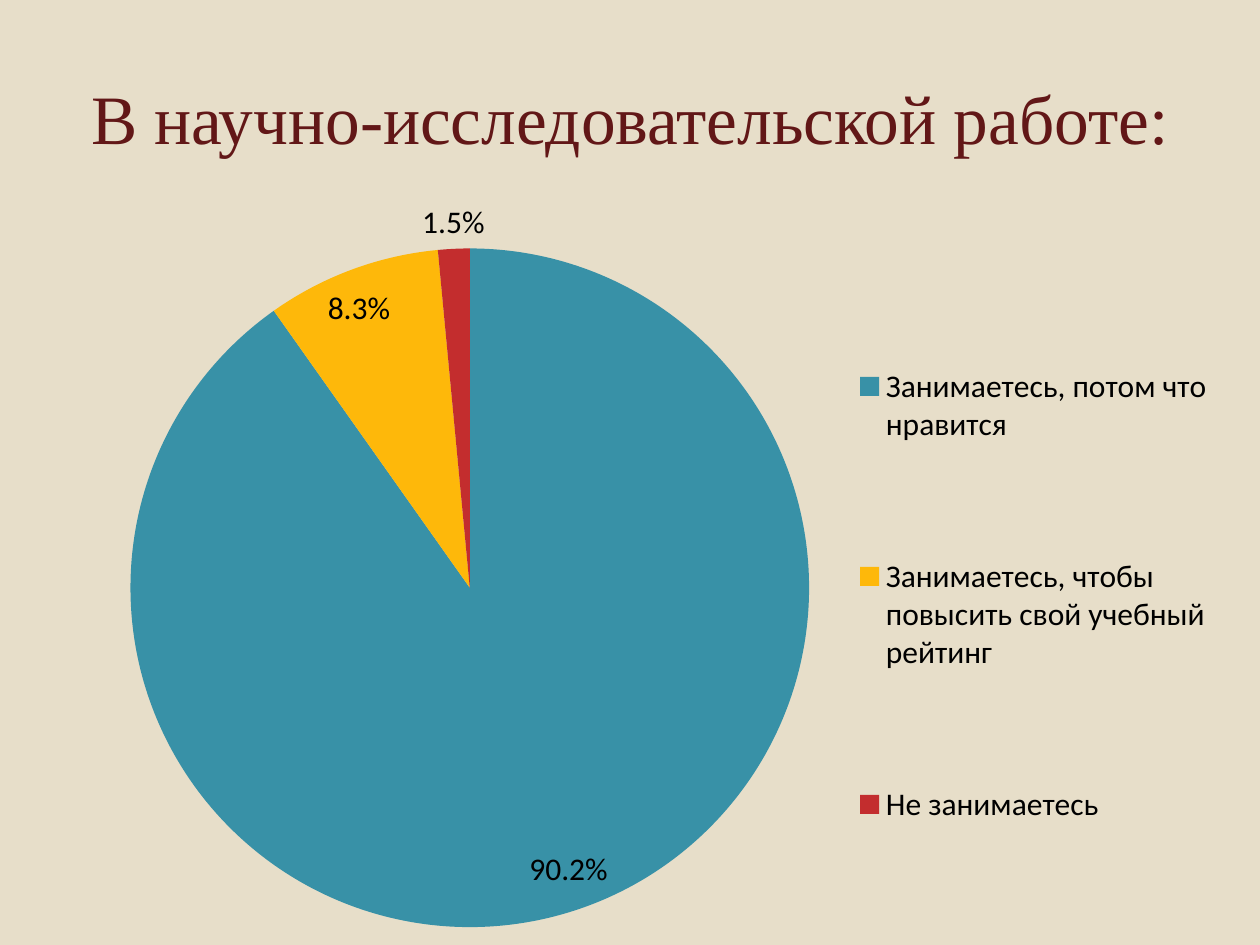
from pptx import Presentation
from pptx import util as u
from pptx.chart.data import CategoryChartData
from pptx.dml.color import RGBColor
from pptx.enum import chart as ch, text
from pptx.oxml import parse_xml
from pptx.oxml.ns import nsdecls


def rgb(value):
    return RGBColor.from_string(value)


def manual_layout(x, y, w, h, inner=False):
    target = '<c:layoutTarget val="inner"/>' if inner else ""
    sizes = "".join(f'<c:{k} val="{v}"/>' for k, v in zip("xywh", (x, y, w, h)))
    return parse_xml(
        f'<c:layout {nsdecls("c")}><c:manualLayout>{target}'
        f'<c:xMode val="edge"/><c:yMode val="edge"/>{sizes}'
        "</c:manualLayout></c:layout>"
    )


class SlideBuilder:
    heading_font = "Times New Roman"
    body_font = "Calibri"
    heading_color = "621717"
    body_color = "000000"
    background = "E7DEC9"

    def __init__(self, prs):
        self.s = prs.slides.add_slide(prs.slide_layouts[6])
        fill = self.s.background.fill
        fill.solid()
        fill.fore_color.rgb = rgb(self.background)

    def style(self, font, name, size, color):
        font.name = name
        font.size = u.Pt(size)
        font.color.rgb = rgb(color)

    def title(self, wording, box, size):
        tf = self.s.shapes.add_textbox(*map(u.Inches, box)).text_frame
        tf.word_wrap = True
        tf.vertical_anchor = text.MSO_ANCHOR.MIDDLE
        p = tf.paragraphs[0]
        p.alignment = text.PP_ALIGN.CENTER
        r = p.add_run()
        r.text = wording
        self.style(r.font, self.heading_font, size, self.heading_color)

    def pie(self, slices, box, size, plot_area, legend_area):
        data = CategoryChartData()
        data.categories = [name for name, _, _ in slices]
        data.add_series("Series 1", [value for _, value, _ in slices])
        chart = self.s.shapes.add_chart(
            ch.XL_CHART_TYPE.PIE, *map(u.Inches, box), data
        ).chart
        chart.has_title = False
        self.style(chart.font, self.body_font, size, self.body_color)

        plot = chart.plots[0]
        plot.vary_by_categories = True
        for i, (_, _, color) in enumerate(slices):
            fill = plot.series[0].points[i].format.fill
            fill.solid()
            fill.fore_color.rgb = rgb(color)

        plot.has_data_labels = True
        labels = plot.data_labels
        labels.show_percentage = True
        labels.show_value = False
        labels.number_format = "0.0%"
        labels.number_format_is_linked = False
        labels.position = ch.XL_LABEL_POSITION.BEST_FIT
        self.style(labels.font, self.body_font, size, self.body_color)

        chart.has_legend = True
        legend = chart.legend
        legend.position = ch.XL_LEGEND_POSITION.RIGHT
        legend.include_in_layout = False
        self.style(legend.font, self.body_font, size, self.body_color)

        for parent, layout in (
            (chart._chartSpace.chart.plotArea, manual_layout(*plot_area, inner=True)),
            (legend._element, manual_layout(*legend_area)),
        ):
            for old in parent.xpath("c:layout"):
                parent.remove(old)
            before = parent.xpath("c:legendPos")
            parent.insert(len(before), layout)


def main():
    prs = Presentation()
    prs.slide_width, prs.slide_height = u.Inches(10), u.Inches(7.5)
    slide = SlideBuilder(prs)
    slide.title("В научно-исследовательской работе:", (0.5, 0.3, 9, 1.25), 39.6)
    slide.pie(
        [
            ("Занимаетесь, потом что нравится", 90.2, "3891A7"),
            ("Занимаетесь, чтобы повысить свой учебный рейтинг", 8.3, "FEB80A"),
            ("Не занимаетесь", 1.5, "C32D2E"),
        ],
        box=(0.67, 1.47, 9.13, 6.03),
        size=18,
        plot_area=(0.04, 0.08, 0.59, 0.9),
        legend_area=(0.66, 0.09, 0.33, 0.9),
    )
    prs.save("out.pptx")


if __name__ == "__main__":
    main()
